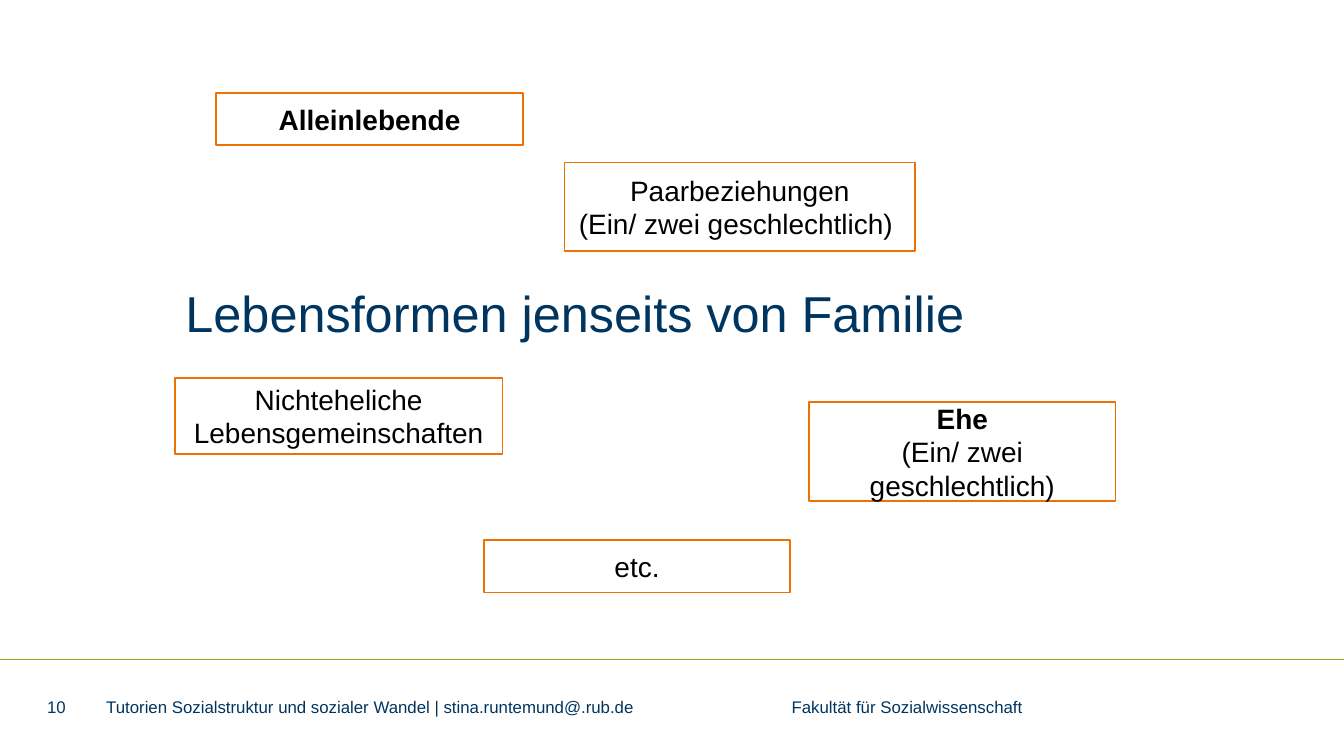
"""Build the slide on ways of living beyond the family."""
from lxml.etree import SubElement
from pptx import Presentation
from pptx.dml.color import RGBColor
from pptx.enum.shapes import MSO_CONNECTOR, MSO_SHAPE
from pptx.enum.text import MSO_ANCHOR as Anchor, PP_ALIGN as Align
from pptx.oxml.ns import qn
from pptx.util import Inches, Pt

NAVY, ORANGE, GREEN, BLACK, WHITE = "003560", "EE7203", "8DAE10", "000000", "FFFFFF"

deck = Presentation()
deck.slide_width = Inches(10)
deck.slide_height = deck.slide_width * 9 // 16
slide = deck.slides.add_slide(deck.slide_layouts[5])


def area(left, top, width, height):
    """Turn percentages of the slide's size into lengths."""
    across, down = deck.slide_width / 100, deck.slide_height / 100
    return [round(v) for v in (left * across, top * down, width * across, height * down)]


def write(frame, text, size, colour, align=Align.LEFT, margin=0):
    """Fill a text frame, centred vertically, and format its runs."""
    frame.text = text
    frame.word_wrap = True
    frame.vertical_anchor = Anchor.MIDDLE
    frame.margin_left = frame.margin_right = Inches(margin)
    frame.margin_top = frame.margin_bottom = Inches(margin / 2)
    for paragraph in frame.paragraphs:
        paragraph.alignment = align
        for run in paragraph.runs:
            run.font.name, run.font.size = "Arial", Pt(size)
            run.font.color.rgb = RGBColor.from_string(colour)


rule_left, rule_top, rule_width, _ = area(0, 87.29, 100, 0)
footer_rule = slide.shapes.add_connector(
    MSO_CONNECTOR.STRAIGHT, rule_left, rule_top, rule_width, rule_top)
footer_rule.line.color.rgb = RGBColor.from_string(GREEN)
footer_rule.line.width = Pt(0.5)
SubElement(footer_rule._element.spPr, qn("a:effectLst"))

heading = slide.shapes.title
heading.left, heading.top, heading.width, heading.height = area(13.8, 37.33, 64.6, 9.07)
write(heading.text_frame, "Lebensformen jenseits von Familie", 27, NAVY)
heading.text_frame.vertical_anchor = Anchor.TOP

footers = [
    (7.9, 68.9, "Tutorien Sozialstruktur und sozialer Wandel | "
                "stina.runtemund@.rub.de\tFakultät für Sozialwissenschaft"),
    (3.5, 2.8, "10"),
]
for left, width, text in footers:
    footer = slide.shapes.add_textbox(*area(left, 92.44, width, 2.13)).text_frame
    write(footer, text, 9, NAVY)
    if "\t" in text:
        tabs = SubElement(footer.paragraphs[0]._p.get_or_add_pPr(), qn("a:tabLst"))
        SubElement(tabs, qn("a:tab"), pos=str(Inches(5.1)), algn="l")

life_forms = [
    (16.1, 12.27, 22.8, 6.93, "Alleinlebende", True),
    (13, 49.96, 24.4, 10.13, "Nichteheliche Lebensgemeinschaften", False),
    (42, 21.51, 26.1, 11.73, "Paarbeziehungen\n(Ein/ zwei geschlechtlich) ", False),
    (60.2, 53.16, 22.8, 13.16, "Ehe\n(Ein/ zwei geschlechtlich)", True),
    (36, 71.47, 22.8, 6.93, "etc.", False),
]
for left, top, width, height, text, bold in life_forms:
    life_form = slide.shapes.add_shape(MSO_SHAPE.RECTANGLE, *area(left, top, width, height))
    life_form.shadow.inherit = False
    life_form.fill.solid()
    life_form.fill.fore_color.rgb = RGBColor.from_string(WHITE)
    life_form.line.color.rgb = RGBColor.from_string(ORANGE)
    life_form.line.width = Pt(1)
    write(life_form.text_frame, text, 15, BLACK, Align.CENTER, 0.1)
    life_form.text_frame.paragraphs[0].runs[0].font.bold = bold

deck.save("out.pptx")
